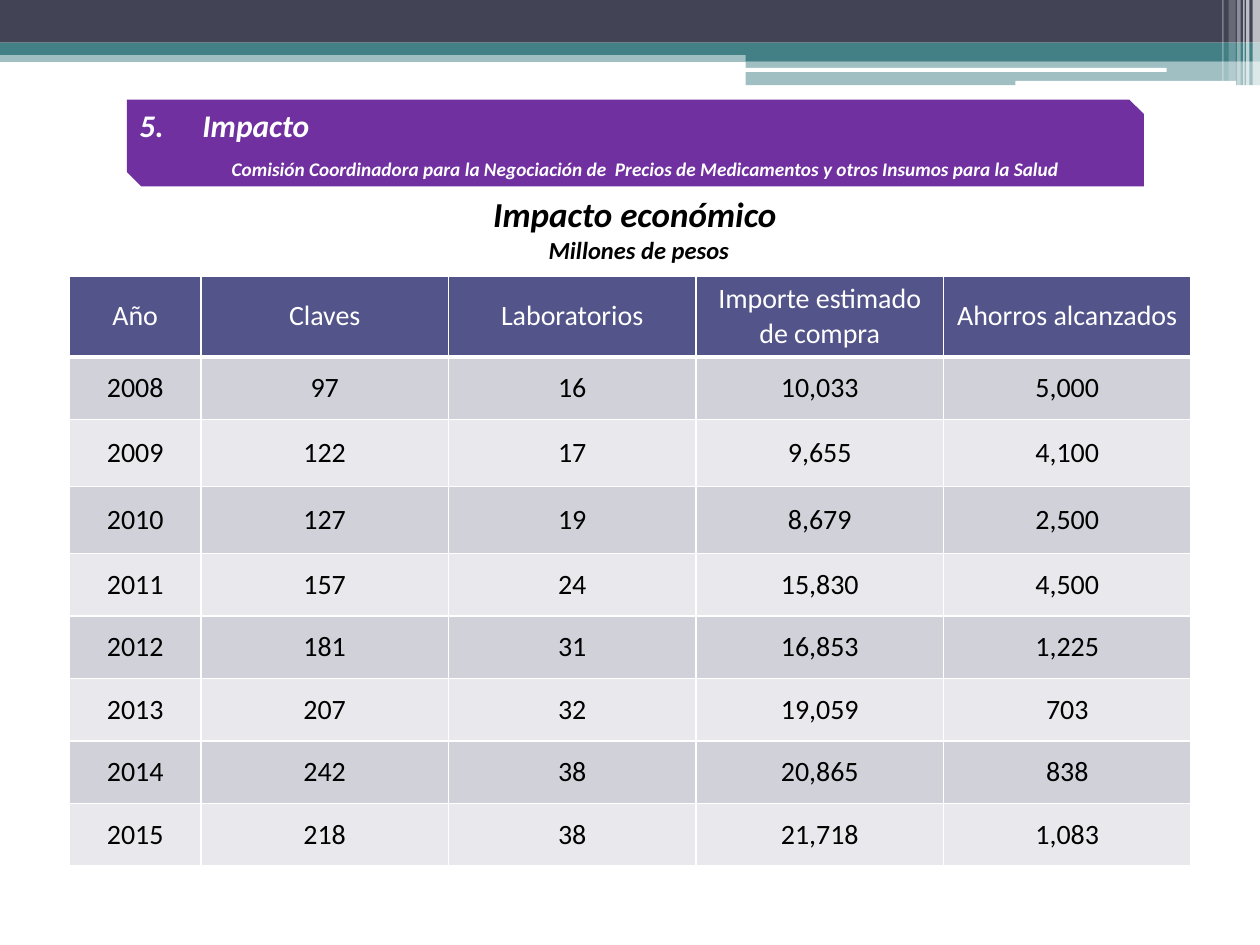
from lxml.etree import SubElement
from pptx import Presentation
from pptx.dml.color import RGBColor
from pptx.enum.shapes import MSO_SHAPE
from pptx.enum.text import MSO_ANCHOR, MSO_AUTO_SIZE, PP_ALIGN
from pptx.oxml.ns import qn
from pptx.util import Cm, Pt

FONT = "Calibri"
WHITE, BLACK = "FFFFFF", "000000"
NAVY, TEAL, PURPLE = "424456", "438086", "7030A0"
HEADER_FILL, BAND_FILLS = "53548A", ("D1D1DA", "E9E9ED")

HEADER_BARS = [
    (0, 1.02, 25.4, 0.23, TEAL, 50),
    (0, 0, 25.4, 0.86, NAVY, 100),
    (0, 0.86, 25.4, 0.25, TEAL, 100),
    (15.03, 0.99, 10.37, 0.24, TEAL, 100),
    (15.03, 1.23, 10.37, 0.49, TEAL, 50),
]
WHITE_LINES = [(15.01, 1.37, 8.51, 0.08), (20.47, 1.63, 4.45, 0.1)]
CORNER_STRIPES = [
    (25.25, 0.15, 1.73, 65),
    (25.12, 0.07, 1.73, 65),
    (25.06, 0.03, 1.73, 60),
    (24.94, 0.07, 1.73, 40),
    (24.77, 0.14, 1.63, 20),
    (24.64, 0.03, 1.63, 30),
]

COLUMN_WIDTHS = [2.65] + [4.99] * 4
ROW_HEIGHTS = [1.35, 1.26, 1.35, 1.35] + [1.26] * 5
IMPACT_ROWS = [
    ("Año", "Claves", "Laboratorios", "Importe estimado de compra", "Ahorros alcanzados"),
    ("2008", "97", "16", "10,033", "5,000"),
    ("2009", "122", "17", "9,655", "4,100"),
    ("2010", "127", "19", "8,679", "2,500"),
    ("2011", "157", "24", "15,830", "4,500"),
    ("2012", "181", "31", "16,853", "1,225"),
    ("2013", "207", "32", "19,059", "703"),
    ("2014", "242", "38", "20,865", "838"),
    ("2015", "218", "38", "21,718", "1,083"),
]


def rgb(color):
    return RGBColor.from_string(color)


def add_block(slide, kind, left, top, width, height, color, opacity=100):
    block = slide.shapes.add_shape(kind, Cm(left), Cm(top), Cm(width), Cm(height))
    block.shadow.inherit = False
    block.line.fill.background()
    block.fill.solid()
    block.fill.fore_color.rgb = rgb(color)
    if opacity < 100:
        tint = block.element.spPr.find(qn("a:solidFill"))[0]
        SubElement(tint, qn("a:alpha"), val=str(opacity * 1000))


def style_paragraph(paragraph, size, color, align=PP_ALIGN.CENTER, strong=True):
    paragraph.alignment = align
    for run in paragraph.runs:
        run.font.name = FONT
        run.font.size = Pt(size)
        run.font.bold = run.font.italic = strong
        run.font.color.rgb = rgb(color)


def add_label(slide, left, top, width, height, text, size, align, wrap=True):
    label = slide.shapes.add_textbox(Cm(left), Cm(top), Cm(width), Cm(height))
    label.text_frame.word_wrap = wrap
    label.text_frame.text = text
    paragraph = label.text_frame.paragraphs[0]
    style_paragraph(paragraph, size, WHITE, align)
    return paragraph


def number_paragraph(paragraph, start):
    properties = paragraph._p.get_or_add_pPr()
    properties.set("marL", str(Cm(1.27)))
    properties.set("indent", str(-Cm(1.27)))
    SubElement(properties, qn("a:buFont"), typeface="+mj-lt")
    SubElement(properties, qn("a:buAutoNum"), type="arabicPeriod", startAt=str(start))


def add_header_decoration(slide):
    for left, top, width, height, color, opacity in HEADER_BARS:
        add_block(slide, MSO_SHAPE.RECTANGLE, left, top, width, height, color, opacity)
    for line in WHITE_LINES:
        add_block(slide, MSO_SHAPE.ROUNDED_RECTANGLE, *line, WHITE)
    for left, width, height, opacity in CORNER_STRIPES:
        add_block(slide, MSO_SHAPE.RECTANGLE, left, 0, width, height, WHITE, opacity)


def fill_title(title):
    title.left, title.top, title.width, title.height = Cm(8.13), Cm(3.76), Cm(9.5), Cm(1.7)
    frame = title.text_frame
    frame.text = "Impacto económico \nMillones de pesos"
    frame.auto_size = MSO_AUTO_SIZE.NONE
    frame.vertical_anchor = MSO_ANCHOR.TOP
    for paragraph, size in zip(frame.paragraphs, (20, 14)):
        style_paragraph(paragraph, size, BLACK)


def set_borders(cell, bottom_width):
    properties = cell._tc.get_or_add_tcPr()
    widths = {"a:lnL": 1, "a:lnR": 1, "a:lnT": 1, "a:lnB": bottom_width}
    for tag, width in widths.items():
        border = SubElement(properties, qn(tag), w=str(Pt(width)))
        SubElement(SubElement(border, qn("a:solidFill")), qn("a:srgbClr"), val=WHITE)


def fill_cell(cell, text, fill, color, bottom_width):
    set_borders(cell, bottom_width)
    cell.fill.solid()
    cell.fill.fore_color.rgb = rgb(fill)
    cell.vertical_anchor = MSO_ANCHOR.MIDDLE
    cell.text = text
    style_paragraph(cell.text_frame.paragraphs[0], 16, color, strong=False)


def add_impact_table(slide):
    table = slide.shapes.add_table(
        len(ROW_HEIGHTS), len(COLUMN_WIDTHS), Cm(1.4), Cm(5.56),
        Cm(sum(COLUMN_WIDTHS)), Cm(sum(ROW_HEIGHTS))).table
    for column, width in zip(table.columns, COLUMN_WIDTHS):
        column.width = Cm(width)
    for index, (row, height, values) in enumerate(zip(table.rows, ROW_HEIGHTS, IMPACT_ROWS)):
        row.height = Cm(height)
        if index == 0:
            fill, color, bottom_width = HEADER_FILL, WHITE, 3
        else:
            fill, color, bottom_width = BAND_FILLS[(index - 1) % 2], BLACK, 1
        for cell, value in zip(row.cells, values):
            fill_cell(cell, value, fill, color, bottom_width)


def main():
    presentation = Presentation()
    presentation.slide_width, presentation.slide_height = Cm(25.4), Cm(19.05)
    slide = presentation.slides.add_slide(presentation.slide_layouts[5])
    add_header_decoration(slide)
    add_impact_table(slide)
    fill_title(slide.shapes.title)
    add_block(slide, MSO_SHAPE.SNIP_2_DIAG_RECTANGLE, 2.56, 2.01, 20.5, 1.75, PURPLE)
    add_label(slide, 3.81, 3.05, 18.42, 0.73,
              "Comisión Coordinadora para la Negociación de  Precios de Medicamentos "
              "y otros Insumos para la Salud", 11, PP_ALIGN.CENTER)
    section = add_label(slide, 2.56, 2.01, 3.96, 1.02, "Impacto", 18, PP_ALIGN.LEFT, wrap=False)
    number_paragraph(section, 5)
    presentation.save("out.pptx")


if __name__ == "__main__":
    main()
